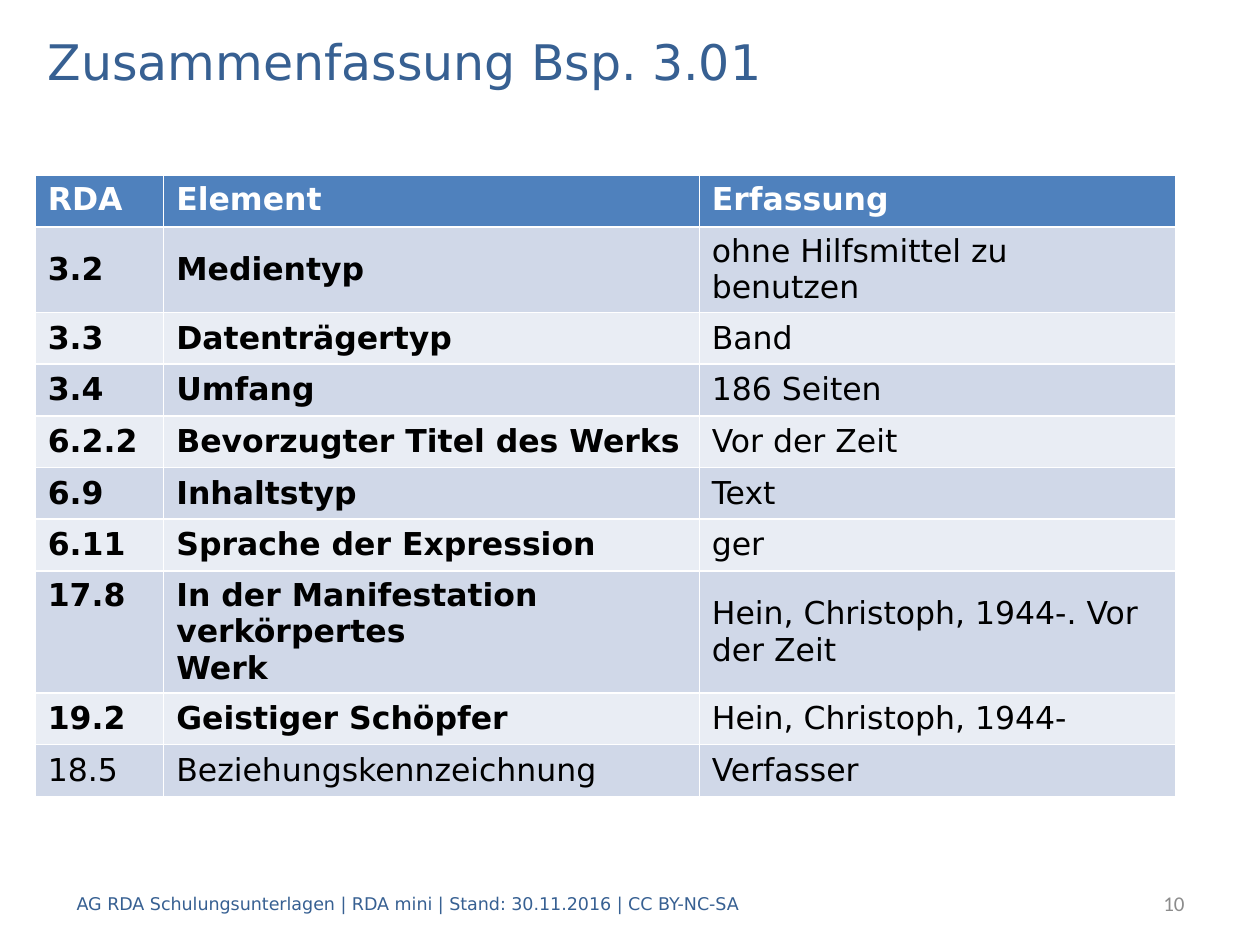
from pptx import Presentation
from pptx.dml.color import RGBColor
from pptx.enum.text import MSO_ANCHOR as Anchor, PP_ALIGN as Align
from pptx.util import Inches, Pt

SANS = "DejaVu Sans"
NAVY, BLUE, WHITE, BLACK, GREY = "376092", "4F81BD", "FFFFFF", "000000", "8C8C8C"
BANDS = ("D0D8E8", "E9EDF4")
COLUMNS = (1.02, 4.25, 3.78)
ROW_HEIGHT = 0.41

HEADER = ("RDA", "Element", "Erfassung")
ELEMENTS = (
    ("3.2", "Medientyp", "ohne Hilfsmittel zu benutzen"),
    ("3.3", "Datenträgertyp", "Band"),
    ("3.4", "Umfang", "186 Seiten"),
    ("6.2.2", "Bevorzugter Titel des Werks", "Vor der Zeit"),
    ("6.9", "Inhaltstyp", "Text"),
    ("6.11", "Sprache der Expression", "ger"),
    ("17.8", "In der Manifestation verkörpertes\nWerk",
     "Hein, Christoph, 1944-. Vor der Zeit"),
    ("19.2", "Geistiger Schöpfer", "Hein, Christoph, 1944-"),
    ("18.5", "Beziehungskennzeichnung", "Verfasser"),
)
OPTIONAL = {"18.5"}       # elements outside the core set are not bold
TOP_ALIGNED = {"17.8"}    # number stays beside the first line


def color(code):
    return RGBColor.from_string(code)


def write(frame, text, size=18, font=SANS, ink=BLACK, bold=False, align=Align.LEFT):
    """Fill a text frame, one paragraph per line of text."""
    frame.word_wrap = True
    for index, line in enumerate(text.split("\n")):
        para = frame.paragraphs[0] if index == 0 else frame.add_paragraph()
        para.alignment = align
        span = para.add_run()
        span.text = line
        span.font.size, span.font.name, span.font.bold = Pt(size), font, bold
        span.font.color.rgb = color(ink)


def add_title(page, text):
    title = page.shapes.title
    title.left, title.top = Inches(0.28), Inches(0.2)
    title.width, title.height = Inches(9.45), Inches(0.56)
    title.text_frame.vertical_anchor = Anchor.MIDDLE
    write(title.text_frame, text, size=28, ink=NAVY)


def add_label(page, text, left, width, **style):
    """Add a text box in the footer band."""
    box = page.shapes.add_textbox(Inches(left), Inches(6.97), Inches(width), Inches(0.4))
    box.text_frame.vertical_anchor = Anchor.MIDDLE
    write(box.text_frame, text, **style)


def fill_cell(cell, text, fill, anchor=Anchor.MIDDLE, **style):
    cell.fill.solid()
    cell.fill.fore_color.rgb = color(fill)
    cell.vertical_anchor = anchor
    write(cell.text_frame, text, **style)


def add_element_table(page):
    count = len(ELEMENTS) + 1
    table = page.shapes.add_table(
        count, len(COLUMNS), Inches(0.28), Inches(1.39),
        Inches(sum(COLUMNS)), Inches(ROW_HEIGHT * count)).table
    for column, width in zip(table.columns, COLUMNS):
        column.width = Inches(width)
    for row in table.rows:
        row.height = Inches(ROW_HEIGHT)

    # Header row
    for col, text in enumerate(HEADER):
        fill_cell(table.cell(0, col), text, BLUE, anchor=Anchor.TOP, ink=WHITE, bold=True)

    # Banded rows: number and element bold, recorded value regular
    for index, entry in enumerate(ELEMENTS):
        number = entry[0]
        for col, text in enumerate(entry):
            top = col == 0 and number in TOP_ALIGNED
            fill_cell(table.cell(index + 1, col), text, BANDS[index % 2],
                      anchor=Anchor.TOP if top else Anchor.MIDDLE,
                      bold=col < 2 and number not in OPTIONAL)


def main():
    deck = Presentation()
    deck.slide_width, deck.slide_height = Inches(10), Inches(7.5)
    page = deck.slides.add_slide(deck.slide_layouts[5])

    add_title(page, "Zusammenfassung Bsp. 3.01")
    add_element_table(page)

    # Footer
    add_label(page, "10", 7.91, 1.59, size=12, font="Calibri", ink=GREY, align=Align.RIGHT)
    add_label(page, "AG RDA Schulungsunterlagen | RDA mini | Stand: 30.11.2016 | CC BY-NC-SA",
              0.51, 8.74, size=10, ink=NAVY)

    deck.save("out.pptx")


if __name__ == "__main__":
    main()
